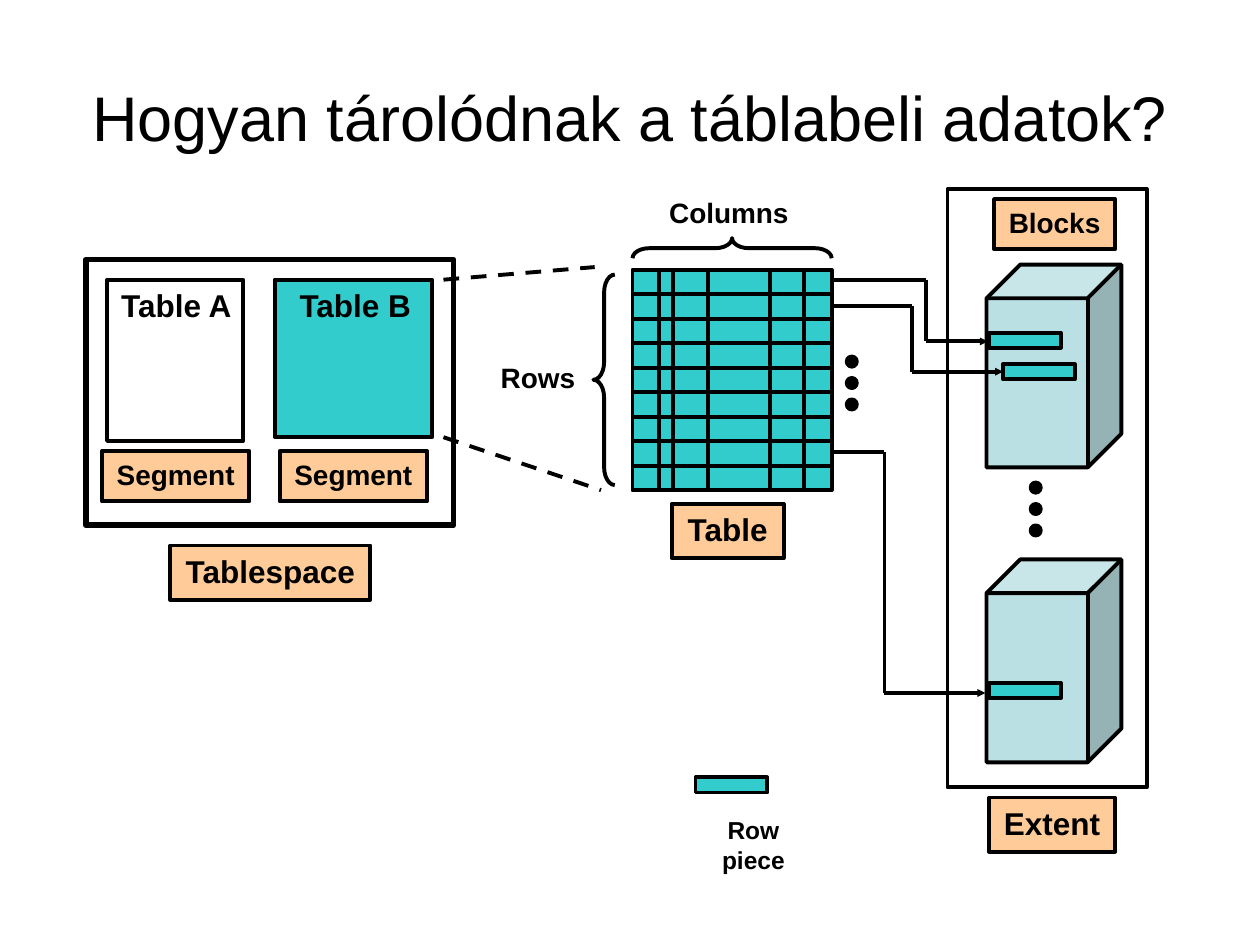
from lxml import etree
from pptx import Presentation
from pptx import util as u
from pptx.dml.color import RGBColor
from pptx.enum import dml, shapes, text
from pptx.oxml.ns import qn

BLACK, TEAL, PEACH, PALE = "000000", "33CCCC", "FFCC99", "BBE0E3"
SHAPE = shapes.MSO_SHAPE


def rgb(value):
    return RGBColor.from_string(value)


class Diagram:
    font = "Arial"
    line_width = 2.25

    def __init__(self, slide):
        self.s = slide

    def title(self, words, x, y, w, h, size):
        sp = self.s.shapes.title
        sp.left, sp.top, sp.width, sp.height = map(u.Inches, (x, y, w, h))
        sp.text_frame.text = words
        sp.text_frame.vertical_anchor = text.MSO_ANCHOR.MIDDLE
        self.style_text(sp.text_frame, size, bold=False)

    def style_text(self, tf, size, bold=True):
        for p in tf.paragraphs:
            p.alignment = text.PP_ALIGN.CENTER
            for r in p.runs:
                r.font.name, r.font.size, r.font.bold = self.font, u.Pt(size), bold
                r.font.color.rgb = rgb(BLACK)

    def set_text(self, sp, words, size, wrap):
        tf = sp.text_frame
        tf.text = words
        tf.word_wrap = wrap
        tf.auto_size = text.MSO_AUTO_SIZE.SHAPE_TO_FIT_TEXT
        tf.vertical_anchor = text.MSO_ANCHOR.TOP
        tf.paragraphs[0].space_before = u.Pt(0.2 * size)
        self.style_text(tf, size)

    def shape(self, kind, x, y, w, h, fill=None, width=line_width):
        sp = self.s.shapes.add_shape(kind, *map(u.Inches, (x, y, w, h)))
        sp.shadow.inherit = False
        if fill:
            sp.fill.solid()
            sp.fill.fore_color.rgb = rgb(fill)
        else:
            sp.fill.background()
        sp.line.color.rgb = rgb(BLACK)
        sp.line.width = u.Pt(width)
        return sp

    def tag(self, words, x, y, w, h, size):
        sp = self.shape(SHAPE.RECTANGLE, x, y, w, h, PEACH)
        self.set_text(sp, words, size, wrap=False)

    def label(self, words, x, y, w, h, size, wrap=False):
        sp = self.s.shapes.add_textbox(*map(u.Inches, (x, y, w, h)))
        self.set_text(sp, words, size, wrap)

    def line(self, x1, y1, x2, y2, dashed=False, arrow=False):
        c = self.s.shapes.add_connector(
            shapes.MSO_CONNECTOR.STRAIGHT, *map(u.Inches, (x1, y1, x2, y2)))
        c.line.color.rgb = rgb(BLACK)
        c.line.width = u.Pt(self.line_width)
        if dashed:
            c.line.dash_style = dml.MSO_LINE.DASH
        props = c._element.spPr
        if arrow:
            etree.SubElement(props.find(qn("a:ln")), qn("a:tailEnd"),
                             type="triangle", w="sm", len="sm")
        etree.SubElement(props, qn("a:effectLst"))

    def route(self, points):
        """Straight legs through the points, with an arrowhead on the last."""
        for start, end in zip(points, points[1:]):
            self.line(*start, *end, arrow=end == points[-1])

    def brace(self, x, y, w, h, rotation=0):
        sp = self.shape(SHAPE.LEFT_BRACE, x, y, w, h)
        sp.adjustments[0] = 0.83
        sp.rotation = rotation

    def dots(self, x, y):
        for i in range(3):
            self.shape(SHAPE.OVAL, x, y + 0.17 * i, 0.08, 0.08, BLACK)

    def row_piece(self, x, y):
        self.shape(SHAPE.RECTANGLE, x, y, 0.57, 0.12, TEAL)


def main():
    prs = Presentation()
    prs.slide_width, prs.slide_height = u.Inches(10), u.Inches(7.5)
    d = Diagram(prs.slides.add_slide(prs.slide_layouts[5]))
    d.title("Hogyan tárolódnak a táblabeli adatok?", 0.5, 0.3, 9, 1.25, 36)

    # Tablespace with two segments
    d.shape(SHAPE.RECTANGLE, 0.68, 2.06, 2.92, 2.11, width=3.25)
    d.tag("Tablespace", 1.35, 4.33, 1.59, 0.43, 18)
    d.shape(SHAPE.RECTANGLE, 0.85, 2.22, 1.08, 1.28)
    d.shape(SHAPE.RECTANGLE, 2.18, 2.22, 1.25, 1.25, TEAL)
    for words, x, segment_x in (("Table A", 0.85, 0.81), ("Table B", 2.27, 2.22)):
        d.label(words, x, 2.22, 1.1, 0.4, 18)
        d.tag("Segment", segment_x, 3.58, 1.17, 0.4, 16)

    # Table grid: nine equal rows, six uneven columns
    left, top, width, height, rows = 5.02, 2.14, 1.58, 1.75, 9
    d.shape(SHAPE.RECTANGLE, left, top, width, height, TEAL)
    for i in range(1, rows):
        y = top + height * i / rows
        d.line(left, y, left + width, y)
    for x in (5.23, 5.34, 5.62, 6.11, 6.38):
        d.line(x, top, x, top + height)
    d.tag("Table", 5.33, 4, 0.89, 0.43, 18)

    # Zoom lines, braces and their labels
    d.line(3.52, 2.22, 4.72, 2.12, dashed=True)
    d.line(3.52, 3.47, 4.77, 3.89, dashed=True)
    d.label("Rows", 3.77, 2.81, 1, 0.37, 16, wrap=True)
    d.label("Columns", 5.21, 1.5, 1.15, 0.37, 16)
    d.brace(4.71, 2.18, 0.17, 1.67)
    d.brace(5.73, 1.18, 0.16, 1.58, rotation=90)

    # Extent with its blocks
    d.shape(SHAPE.RECTANGLE, 7.52, 1.5, 1.58, 4.75)
    d.tag("Blocks", 7.89, 1.58, 0.96, 0.4, 16)
    d.tag("Extent", 7.85, 6.33, 1, 0.43, 18)
    for y in (2.1, 4.44):
        d.shape(SHAPE.CUBE, 7.83, y, 1.07, 1.61, PALE)

    # Row pieces, the last one as a legend
    for x, y in ((7.85, 2.64), (7.96, 2.89), (7.85, 5.42), (5.52, 6.17)):
        d.row_piece(x, y)
    d.label("Row piece", 5.4, 6.42, 1.16, 0.33, 14, wrap=True)

    # From table rows to blocks
    for row_y, bend_x, piece_x, piece_y in (
            (2.22, 7.35, 7.84, 2.71), (2.43, 7.24, 7.96, 2.95), (3.59, 7.02, 7.82, 5.5)):
        d.route([(6.6, row_y), (bend_x, row_y),
                 (bend_x, piece_y), (piece_x, piece_y)])

    # Continuation dots
    d.dots(8.18, 3.83)
    d.dots(6.72, 2.83)

    prs.save("out.pptx")


if __name__ == "__main__":
    main()
